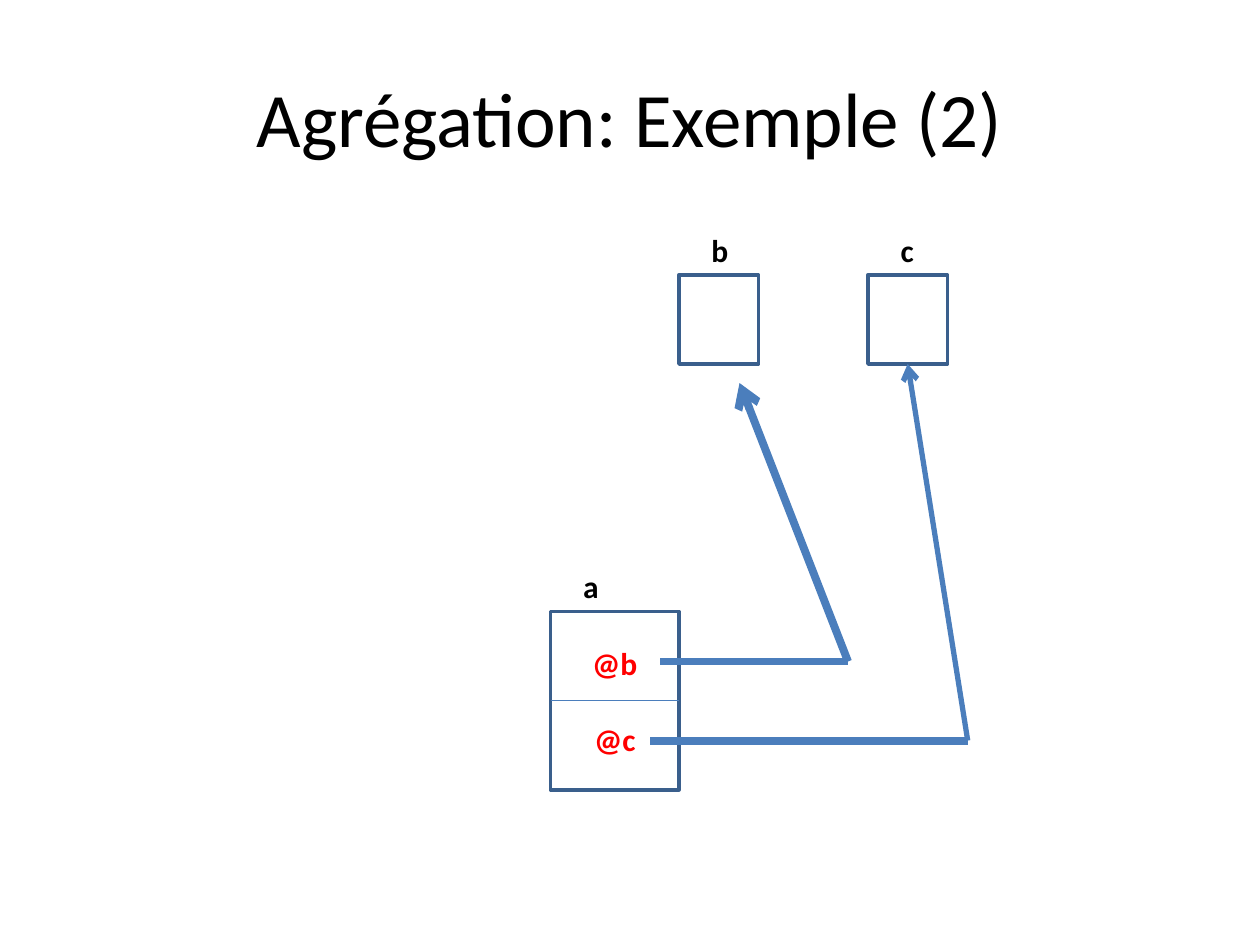
from lxml.etree import SubElement
from pptx import Presentation
from pptx.dml.color import RGBColor
from pptx.enum.shapes import MSO_CONNECTOR, MSO_SHAPE
from pptx.enum.text import MSO_ANCHOR, MSO_AUTO_SIZE, PP_ALIGN
from pptx.oxml.ns import qn
from pptx.util import Pt

TOP, LEFT, BOTTOM, RIGHT = range(4)


def color(value):
    return RGBColor.from_string(value)


def write(para, text, size=18, bold=True, ink="000000", align=PP_ALIGN.LEFT, before=0):
    para.alignment = align
    para.space_before = Pt(before)
    span = para.add_run()
    span.text = text
    span.font.name = "Calibri"
    span.font.size = Pt(size)
    span.font.bold = bold
    span.font.color.rgb = color(ink)


class Diagram:
    outline = "3A5F8C"
    link = "4B7EBC"
    reference = "FF0000"

    def __init__(self, page):
        self.page = page

    def title(self, text, left, top, width, height):
        box = self.page.shapes.title
        box.left, box.top, box.width, box.height = map(Pt, (left, top, width, height))
        box.text_frame.vertical_anchor = MSO_ANCHOR.MIDDLE
        write(box.text_frame.paragraphs[0], text, size=44, bold=False, align=PP_ALIGN.CENTER)

    def label(self, text, left, top, width, height):
        box = self.page.shapes.add_textbox(*map(Pt, (left, top, width, height)))
        box.text_frame.word_wrap = False
        box.text_frame.auto_size = MSO_AUTO_SIZE.SHAPE_TO_FIT_TEXT
        write(box.text_frame.paragraphs[0], text)

    def instance(self, name, left, top, width, height, label_width=24.5, references=()):
        """Draw an object with its name above and its references inside."""
        self.label(name, left + 11.5, top - 28.8, label_width, 28.8)
        box = self.page.shapes.add_shape(
            MSO_SHAPE.RECTANGLE, *map(Pt, (left, top, width, height)))
        box.shadow.inherit = False
        box.fill.background()
        box.line.color.rgb = color(self.outline)
        box.line.width = Pt(2)
        frame = box.text_frame
        frame.vertical_anchor = MSO_ANCHOR.MIDDLE
        for index, text in enumerate(references):
            para = frame.add_paragraph() if index else frame.paragraphs[0]
            write(para, text, ink=self.reference, align=PP_ALIGN.CENTER,
                  before=22 if index else 0)
        return box

    def line(self, start, end, width=4.5, arrow=False):
        connector = self.page.shapes.add_connector(
            MSO_CONNECTOR.STRAIGHT, *map(Pt, (*start, *end)))
        connector.line.color.rgb = color(self.link)
        connector.line.width = Pt(width)
        if arrow:
            SubElement(connector.line._get_or_add_ln(), qn("a:tailEnd"), type="arrow")
        SubElement(connector._element.spPr, qn("a:effectLst"))
        return connector


def main():
    deck = Presentation()
    deck.slide_width, deck.slide_height = Pt(720), Pt(540)
    diagram = Diagram(deck.slides.add_slide(deck.slide_layouts[5]))
    diagram.title("Agrégation: Exemple (2)", 36, 21.6, 648, 90)

    # Objects: b and c are parts, a holds their addresses
    part_c = diagram.instance("c", 496, 157, 45.4, 51, label_width=22.3)
    diagram.instance("b", 388, 157, 45.4, 51)
    whole = diagram.instance("a", 314.6, 349.4, 73.4, 102, references=("@b", "@c"))

    # Divider between the two fields of a
    divider = diagram.line((314.6, 400.4), (388, 400.4), width=0.75)
    divider.begin_connect(whole, LEFT)
    divider.end_connect(whole, RIGHT)

    # Reference from @b to b
    corner_b = (484.6, 378)
    diagram.line((377.3, 378), corner_b)
    diagram.line(corner_b, (422.6, 218.9), arrow=True)

    # Reference from @c to c
    corner_c = (553, 423.2)
    pointer = diagram.line(corner_c, (518.7, 208), width=3, arrow=True)
    pointer.end_connect(part_c, BOTTOM)
    diagram.line((371.5, 423.2), corner_c)

    deck.save("out.pptx")


if __name__ == "__main__":
    main()
